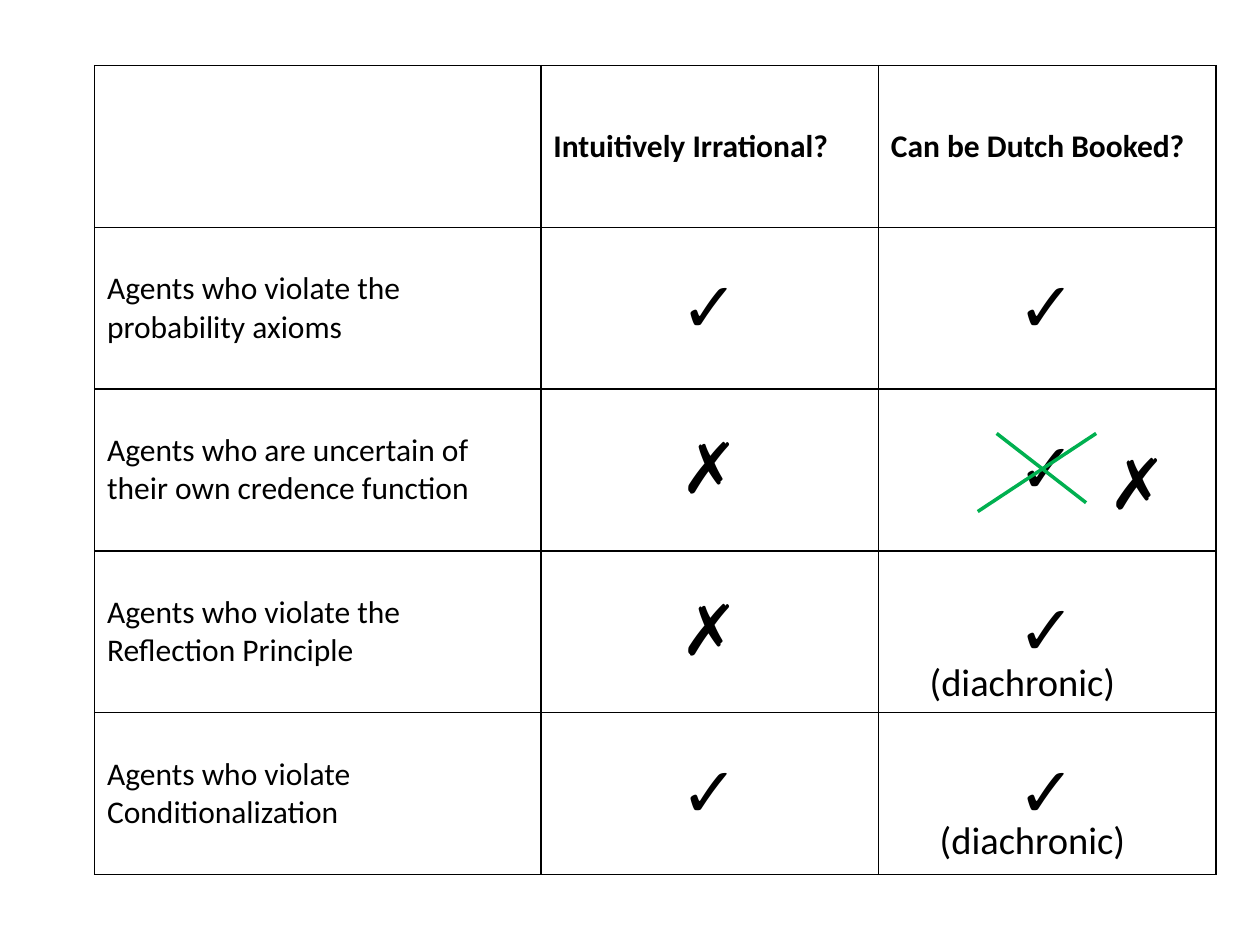
import pptx
import pptx.util
import pptx.dml.color
import pptx.enum.shapes
import pptx.enum.text
import pptx.oxml.ns
from lxml import etree

Inches, Pt = pptx.util.Inches, pptx.util.Pt
COLORS = {"ink": "000000", "strike": "00B050"}
FONT = "Calibri"
YES, NO = "✓", "✗"
HEADER = ["", "Intuitively Irrational?", "Can be Dutch Booked?"]
ROWS = [
    ["Agents who violate the probability axioms", YES, YES],
    ["Agents who are uncertain of their own credence function", NO, YES],
    ["Agents who violate the Reflection Principle", NO, YES],
    ["Agents who violate Conditionalization", YES, YES],
]


def rgb(name):
    return pptx.dml.color.RGBColor.from_string(COLORS[name])


def add_run(p, text, size, bold=False):
    r = p.add_run()
    r.text = text
    r.font.name, r.font.size, r.font.bold = FONT, Pt(size), bold
    r.font.color.rgb = rgb("ink")


def add_borders(cell):
    qn = pptx.oxml.ns.qn
    tcPr = cell._tc.get_or_add_tcPr()
    for i, side in enumerate(("lnL", "lnR", "lnT", "lnB")):
        ln = etree.Element(qn("a:" + side), w=str(Pt(1)))
        fill = etree.SubElement(ln, qn("a:solidFill"))
        etree.SubElement(fill, qn("a:srgbClr"), val=COLORS["ink"])
        tcPr.insert(i, ln)


def add_comparison(s, x, y, w, h):
    rows = [HEADER] + ROWS
    table = s.shapes.add_table(len(rows), len(HEADER), Inches(x), Inches(y),
                               Inches(w), Inches(h)).table
    table.first_row = table.horz_banding = False
    for column, share in zip(table.columns, (0.398, 0.301, 0.301)):
        column.width = Inches(w * share)
    for i, row in enumerate(rows):
        table.rows[i].height = Inches(h / len(rows))
        for j, text in enumerate(row):
            cell = table.cell(i, j)
            cell.fill.background()
            cell.vertical_anchor = pptx.enum.text.MSO_ANCHOR.MIDDLE
            add_borders(cell)
            p = cell.text_frame.paragraphs[0]
            is_mark = text in (YES, NO)
            if is_mark:
                p.alignment = pptx.enum.text.PP_ALIGN.CENTER
            if text:
                add_run(p, text, 40 if is_mark else 18, bold=i == 0)


def add_strike(s, x1, y1, x2, y2):
    line = s.shapes.add_connector(pptx.enum.shapes.MSO_CONNECTOR.STRAIGHT,
                                  Inches(x1), Inches(y1), Inches(x2), Inches(y2))
    line.line.color.rgb = rgb("strike")
    line.line.width = Pt(2)
    etree.SubElement(line._element.spPr, pptx.oxml.ns.qn("a:effectLst"))


def add_note(s, text, size, x, y, w, h):
    tf = s.shapes.add_textbox(Inches(x), Inches(y), Inches(w), Inches(h)).text_frame
    tf.word_wrap = True
    add_run(tf.paragraphs[0], text, size)


def main():
    prs = pptx.Presentation()
    prs.slide_width, prs.slide_height = Inches(10), Inches(7.5)
    s = prs.slides.add_slide(prs.slide_layouts[6])

    # Comparison table
    add_comparison(s, 0.75, 0.52, 8.9, 6.42)

    # Crossed-out tick and its correction
    add_strike(s, 7.91, 3.44, 8.62, 3.99)
    add_strike(s, 7.76, 4.06, 8.7, 3.44)
    add_note(s, NO, 40, 8.7, 3.44, 0.94, 1.45)

    # Remarks under the last two ticks
    for x, y in ((7.28, 5.17), (7.36, 6.43)):
        add_note(s, "(diachronic)", 22, x, y, 2.05, 0.84)

    prs.save("out.pptx")


if __name__ == "__main__":
    main()
